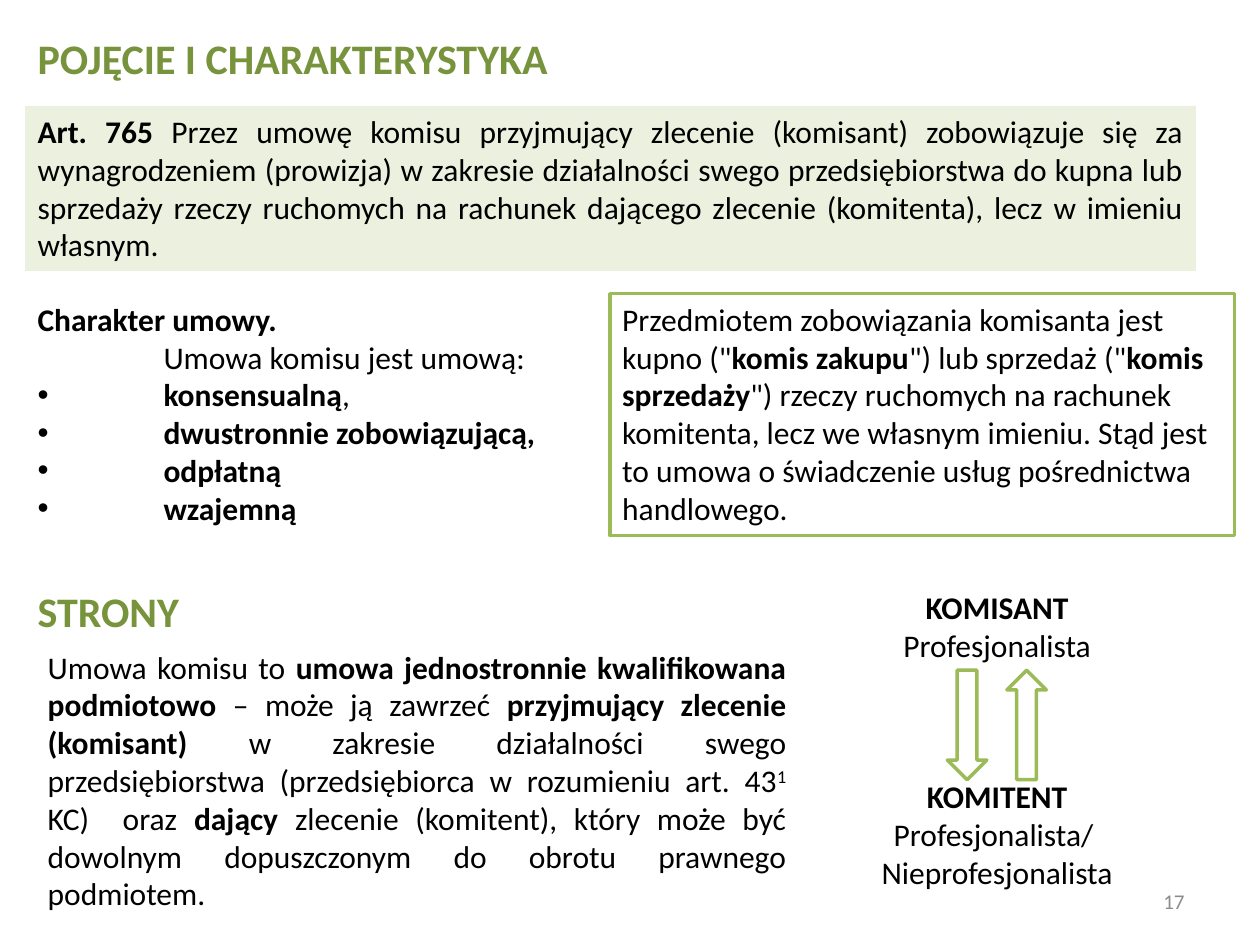
from dataclasses import dataclass

from lxml.etree import SubElement
from pptx import Presentation
from pptx.dml.color import RGBColor as Color
from pptx.enum.shapes import MSO_SHAPE as Shape
from pptx.enum.text import MSO_ANCHOR as Anchor, MSO_AUTO_SIZE as AutoSize, PP_ALIGN as Align
from pptx.oxml.ns import qn
from pptx.util import Pt


@dataclass(frozen=True)
class Theme:
    font: str = "Calibri"
    heading_size: int = 24
    body_size: int = 18
    number_size: int = 12
    black: str = "000000"
    white: str = "FFFFFF"
    heading: str = "77933C"
    accent: str = "9BBB59"
    tint: str = "EBF1DE"
    grey: str = "8C8C8C"


THEME = Theme()
BULLET_INDENT = 72

# Text: paragraphs are lists of (text, style) runs
PLAIN, BOLD, SUPER = "plain", "bold", "super"

ARTICLE = [[
    ("Art. 765 ", BOLD),
    ("Przez umowę komisu przyjmujący zlecenie (komisant) zobowiązuje się za "
     "wynagrodzeniem (prowizja) w zakresie działalności swego przedsiębiorstwa do kupna lub "
     "sprzedaży rzeczy ruchomych na rachunek dającego zlecenie (komitenta), lecz w imieniu "
     "własnym.", PLAIN),
]]
CHARACTER = [
    [("Charakter umowy.", BOLD)],
    [("Umowa komisu jest umową:", PLAIN)],
    [("konsensualną", BOLD), (",", PLAIN)],
    [("dwustronnie zobowiązującą,", BOLD)],
    [("odpłatną", BOLD)],
    [("wzajemną", BOLD)],
]
SUBJECT = [[
    ('Przedmiotem zobowiązania komisanta jest kupno ("', PLAIN),
    ("komis zakupu", BOLD),
    ('") lub sprzedaż ("', PLAIN),
    ("komis sprzedaży", BOLD),
    ('") rzeczy ruchomych na rachunek komitenta, lecz we własnym imieniu. Stąd jest to umowa '
     "o świadczenie usług pośrednictwa handlowego.", PLAIN),
]]
PARTIES = [[
    ("Umowa komisu to ", PLAIN),
    ("umowa jednostronnie kwalifikowana podmiotowo ", BOLD),
    ("– może ją zawrzeć ", PLAIN),
    ("przyjmujący zlecenie (komisant) ", BOLD),
    ("w zakresie działalności swego przedsiębiorstwa (przedsiębiorca w rozumieniu art. 43", PLAIN),
    ("1", SUPER),
    (" KC)  oraz ", PLAIN),
    ("dający ", BOLD),
    ("zlecenie (komitent), który może być dowolnym dopuszczonym do obrotu prawnego "
     "podmiotem.", PLAIN),
]]
AGENT = [[("KOMISANT", BOLD)], [("Profesjonalista", PLAIN)]]
PRINCIPAL = [
    [("KOMITENT", BOLD)],
    [("Profesjonalista/ ", PLAIN)],
    [("Nieprofesjonalista", PLAIN)],
]


def write_text(box, paragraphs, size=THEME.body_size, color=THEME.black,
               align=Align.LEFT, anchor=Anchor.TOP, wrap=True):
    frame = box.text_frame
    frame.word_wrap = wrap
    frame.auto_size = AutoSize.NONE
    frame.vertical_anchor = anchor
    for index, runs in enumerate(paragraphs):
        para = frame.add_paragraph() if index else frame.paragraphs[0]
        para.alignment = align
        for text, style in runs:
            span = para.add_run()
            span.text = text
            span.font.name = THEME.font
            span.font.size = Pt(size)
            span.font.bold = style == BOLD
            span.font.color.rgb = Color.from_string(color)
            if style == SUPER:
                span._r.get_or_add_rPr().set("baseline", "30000")


def add_text(page, area, paragraphs, **options):
    box = page.shapes.add_textbox(*map(Pt, area))
    write_text(box, paragraphs, **options)
    return box


def add_heading(page, area, text):
    add_text(page, area, [[(text, BOLD)]], size=THEME.heading_size, color=THEME.heading)


def add_panel(page, kind, area, fill, line=None):
    panel = page.shapes.add_shape(kind, *map(Pt, area))
    panel.shadow.inherit = False
    panel.fill.solid()
    panel.fill.fore_color.rgb = Color.from_string(fill)
    if line:
        panel.line.color.rgb = Color.from_string(line)
        panel.line.width = Pt(2)
    else:
        panel.line.fill.background()
    return panel


def indent(para, bullet=False):
    properties = para._p.get_or_add_pPr()
    properties.set("marL", str(Pt(BULLET_INDENT)))
    properties.set("indent", str(Pt(-BULLET_INDENT if bullet else 0)))
    if bullet:
        SubElement(properties, qn("a:buFont")).set("typeface", "Arial")
        SubElement(properties, qn("a:buChar")).set("char", "•")


def main():
    deck = Presentation()
    deck.slide_width, deck.slide_height = Pt(720), Pt(540)
    page = deck.slides.add_slide(deck.slide_layouts[6])

    # Definition
    add_heading(page, (14.4, 15.1, 309, 36.4), "POJĘCIE I CHARAKTERYSTYKA")
    article = add_panel(page, Shape.RECTANGLE, (14.4, 60.5, 669, 94.3), THEME.tint)
    write_text(article, ARTICLE, align=Align.JUSTIFY)

    # Character of the contract
    character = add_text(page, (14.4, 167.8, 330, 138.2), CHARACTER)
    for index, para in enumerate(character.text_frame.paragraphs[1:]):
        indent(para, bullet=index > 0)

    # Subject of the obligation
    subject = add_panel(page, Shape.RECTANGLE, (348.5, 167.8, 357, 138.2),
                        THEME.white, THEME.accent)
    write_text(subject, SUBJECT)

    # Parties
    add_heading(page, (14.4, 331, 309, 36.4), "STRONY")
    add_text(page, (20.2, 366.5, 436.3, 159.8), PARTIES, align=Align.JUSTIFY)

    # Exchange between the parties
    for top, height, party in ((332.6, 50.4, AGENT), (440.6, 72, PRINCIPAL)):
        add_text(page, (496, top, 147.6, height), party, align=Align.CENTER, wrap=False)
    for left, kind in ((541.4, Shape.DOWN_ARROW), (575.4, Shape.UP_ARROW)):
        add_panel(page, kind, (left, 383, 22.5, 62.6), THEME.white, THEME.accent)

    # Page number
    add_text(page, (516, 500.5, 168, 28.8), [[("17", PLAIN)]], size=THEME.number_size,
             color=THEME.grey, align=Align.RIGHT, anchor=Anchor.MIDDLE)

    deck.save("out.pptx")


if __name__ == "__main__":
    main()
